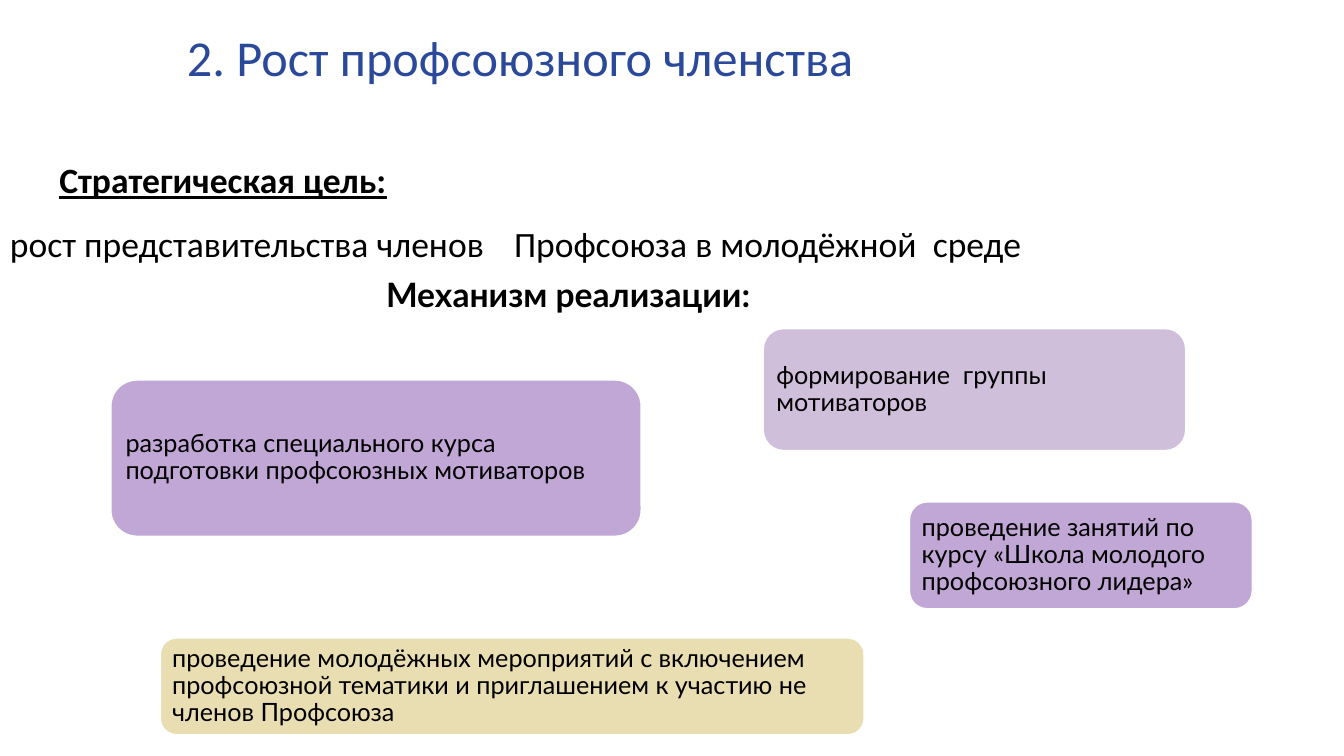
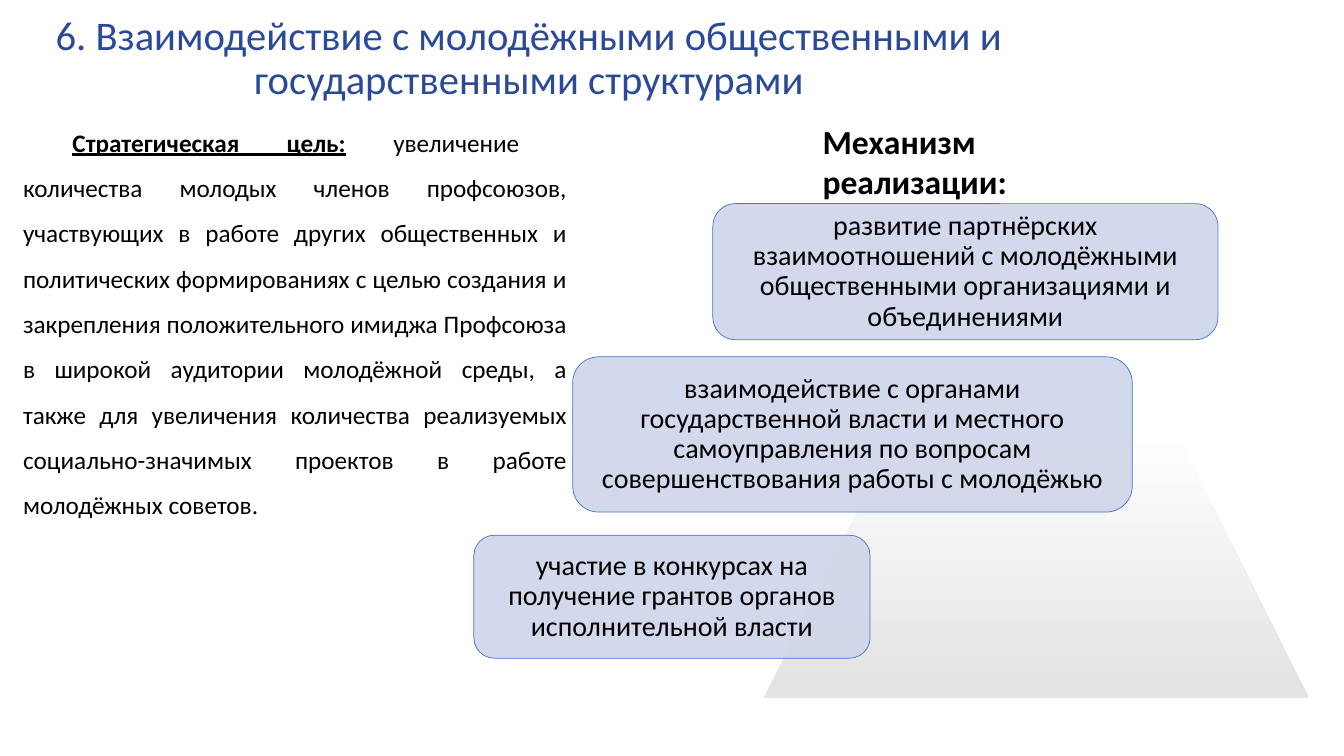
import pptx
import pptx.dml.color
import pptx.enum.shapes
import pptx.enum.text
import pptx.oxml
import pptx.oxml.ns
import pptx.util

RGB = pptx.dml.color.RGBColor
SHAPE = pptx.enum.shapes.MSO_SHAPE
ALIGN = pptx.enum.text.PP_ALIGN
ANCHOR = pptx.enum.text.MSO_ANCHOR

PX = 9144
PARAGRAPH_INDENT = 49
TITLE_BLUE = RGB(0x2B, 0x49, 0x9A)
BLACK = RGB(0, 0, 0)
WHITE = RGB(255, 255, 255)
PALE_LILAC = RGB(0xCF, 0xBF, 0xDB)
LILAC = RGB(0xC0, 0xA7, 0xD5)
SAND = RGB(0xE9, 0xDE, 0xB1)
CARD_BLUE = RGB(0xCF, 0xD5, 0xEA)
OUTLINE_BLUE = RGB(0x44, 0x72, 0xC4)
GRAY = RGB(0xE3, 0xE3, 0xE3)

GOAL_LABEL = "Стратегическая цель:"
MECHANISM_LABEL = "Механизм реализации:"


def emu(box):
    return [pptx.util.Emu(length * PX) for length in box]


def write(para, text, size=18, font="Calibri", color=BLACK, bold=False,
          underline=False, align=ALIGN.LEFT, spacing=1.0, indent=0, tab=None):
    properties = para._p.get_or_add_pPr()
    properties.set("marL", "0")
    properties.set("indent", str(indent * PX))
    if tab:
        stops = pptx.oxml.parse_xml(
            f'<a:tabLst {pptx.oxml.ns.nsdecls("a")}>'
            f'<a:tab pos="{tab * PX}" algn="l"/></a:tabLst>')
        properties.append(stops)
    para.alignment = align
    para.line_spacing = spacing
    para.space_before = pptx.util.Pt(0)
    span = para.add_run()
    span.text = text
    span.font.size = pptx.util.Pt(size)
    span.font.name = font
    span.font.color.rgb = color
    span.font.bold = bold
    span.font.underline = underline


def add_titled_page(deck, title, box, size):
    page = deck.slides.add_slide(deck.slide_layouts[5])
    holder = page.shapes.title
    holder.left, holder.top, holder.width, holder.height = emu(box)
    frame = holder.text_frame
    frame.auto_size = pptx.enum.text.MSO_AUTO_SIZE.NONE
    frame.vertical_anchor = ANCHOR.MIDDLE
    write(frame.paragraphs[0], title, size=size, color=TITLE_BLUE,
          align=ALIGN.CENTER, spacing=0.9)
    return page


def add_text_frame(page, box):
    frame = page.shapes.add_textbox(*emu(box)).text_frame
    frame.word_wrap = True
    return frame


def add_mechanism_label(page, box, **style):
    para = add_text_frame(page, box).paragraphs[0]
    write(para, MECHANISM_LABEL, size=24, bold=True, **style)


def add_card(page, box, text, fill, outline, outline_width, inset,
             opacity=100, **style):
    card = page.shapes.add_shape(SHAPE.ROUNDED_RECTANGLE, *emu(box))
    card.shadow.inherit = False
    card.fill.solid()
    card.fill.fore_color.rgb = fill
    if opacity < 100:
        color = card.element.spPr.find(".//" + pptx.oxml.ns.qn("a:srgbClr"))
        color.append(pptx.oxml.parse_xml(
            f'<a:alpha {pptx.oxml.ns.nsdecls("a")} val="{opacity * 1000}"/>'))
    card.line.color.rgb = outline
    card.line.width = pptx.util.Pt(outline_width)
    frame = card.text_frame
    frame.word_wrap = True
    frame.vertical_anchor = ANCHOR.MIDDLE
    frame.margin_left = frame.margin_right = inset * PX
    frame.margin_top = frame.margin_bottom = inset * PX
    write(frame.paragraphs[0], text, spacing=0.9, **style)


def add_pyramid(page, box):
    pyramid = page.shapes.add_shape(SHAPE.ISOSCELES_TRIANGLE, *emu(box))
    pyramid.shadow.inherit = False
    pyramid.line.fill.background()
    pyramid.fill.gradient()
    pyramid.fill.gradient_angle = 270
    for stop, (position, color) in zip(pyramid.fill.gradient_stops,
                                       [(0.5, WHITE), (1, GRAY)]):
        stop.position = position
        stop.color.rgb = color


def build_membership_page(deck):
    page = add_titled_page(deck, "2. Рост профсоюзного членства",
                           (0, 23, 1032, 74), 35.9)
    goal = add_text_frame(page, (0, 131, 1127, 322))
    write(goal.paragraphs[0], GOAL_LABEL, size=25.4, bold=True,
          underline=True, spacing=1.5, indent=PARAGRAPH_INDENT)
    write(goal.add_paragraph(),
          "рост представительства членов\tПрофсоюза в молодёжной  среде",
          size=25.4, spacing=1.5, tab=502)
    cards = [
        ((757, 326, 419, 121), PALE_LILAC, "формирование  группы мотиваторов"),
        ((110, 377, 526, 155), LILAC,
         "разработка специального курса подготовки профсоюзных мотиваторов"),
        ((902, 498, 340, 106), LILAC,
         "проведение занятий по курсу «Школа молодого профсоюзного лидера»"),
        ((159, 633, 698, 96), SAND,
         "проведение молодёжных мероприятий с включением профсоюзной "
         "тематики и приглашением к участию не членов Профсоюза"),
    ]
    for box, fill, text in cards:
        add_card(page, box, text, fill, WHITE, 1, 7, font="Lato")
    add_mechanism_label(page, (324, 267, 478, 50), font="Lato",
                        align=ALIGN.JUSTIFY, indent=PARAGRAPH_INDENT)


def build_partnership_page(deck):
    page = add_titled_page(
        deck, "6. Взаимодействие с молодёжными общественными и "
        "государственными структурами", (-25, -46, 1100, 210), 29)
    add_pyramid(page, (758, 152, 540, 540))
    cards = [
        ((707, 202, 501, 135),
         "развитие партнёрских взаимоотношений с молодёжными "
         "общественными организациями и объединениями"),
        ((568, 354, 555, 154),
         "взаимодействие с органами государственной власти и местного "
         "самоуправления по вопросам совершенствования работы с молодёжью"),
        ((470, 531, 393, 122),
         "участие в конкурсах на получение грантов органов "
         "исполнительной власти"),
    ]
    for box, text in cards:
        add_card(page, box, text, CARD_BLUE, OUTLINE_BLUE, 0.5, 8,
                 opacity=90, size=20, align=ALIGN.CENTER)
    add_mechanism_label(page, (806, 115, 346, 50))
    para = add_text_frame(page, (13, 106, 559, 414)).paragraphs[0]
    layout = dict(align=ALIGN.JUSTIFY, spacing=1.5, indent=PARAGRAPH_INDENT)
    write(para, GOAL_LABEL, bold=True, underline=True, **layout)
    write(para, " увеличение  количества молодых членов профсоюзов, "
          "участвующих в работе других общественных и политических "
          "формированиях с целью создания и закрепления положительного "
          "имиджа Профсоюза в широкой аудитории молодёжной среды, а также "
          "для увеличения количества реализуемых социально-значимых "
          "проектов в работе молодёжных советов.", **layout)


def main():
    deck = pptx.Presentation()
    deck.slide_width, deck.slide_height = emu((1333, 750))
    build_membership_page(deck)
    build_partnership_page(deck)
    deck.save("out.pptx")


if __name__ == "__main__":
    main()
